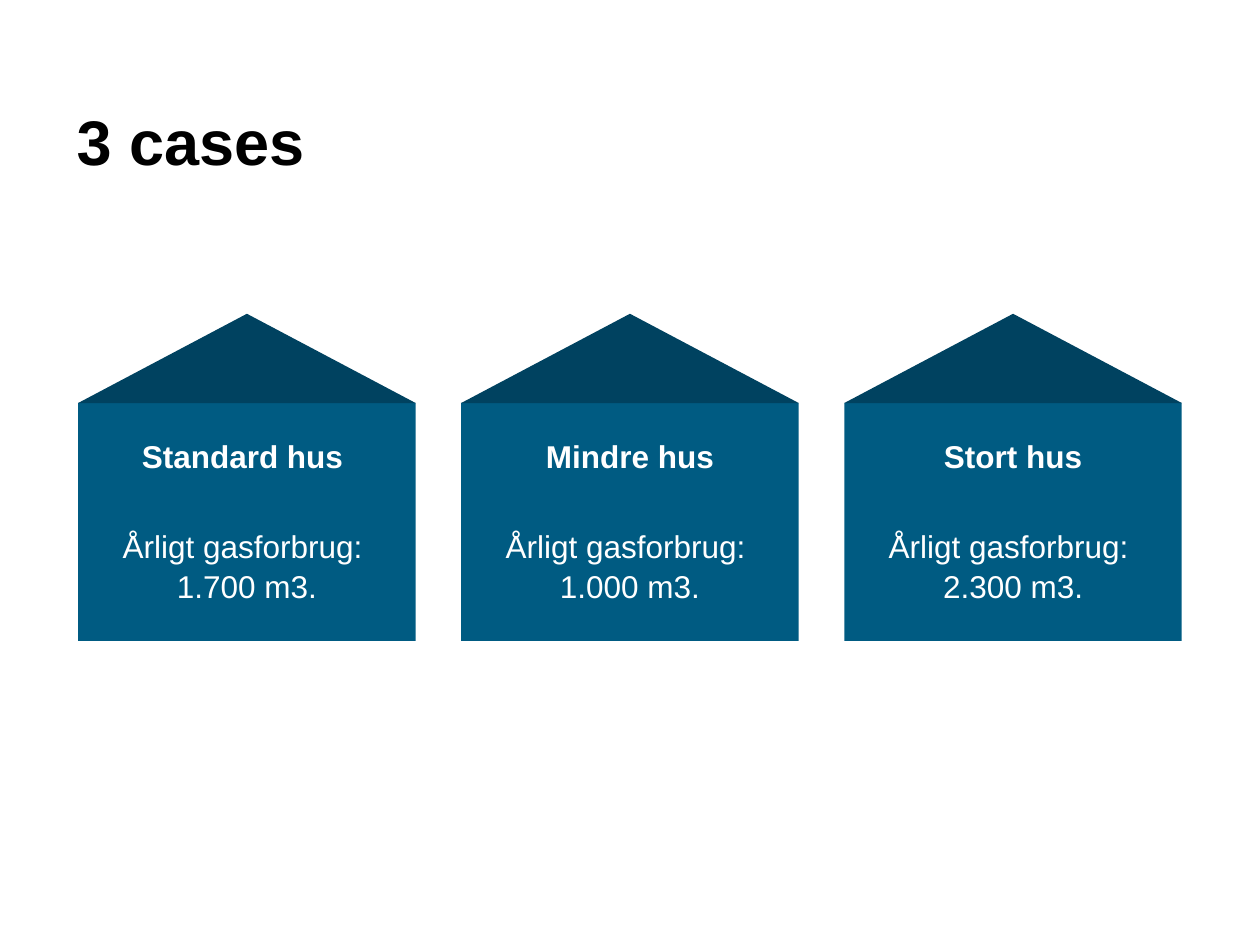
from dataclasses import dataclass

from pptx import Presentation
from pptx.dml.color import RGBColor
from pptx.enum.shapes import MSO_SHAPE
from pptx.enum.text import MSO_ANCHOR, PP_ALIGN
from pptx.shapes.autoshape import Shape
from pptx.slide import Slide
from pptx.util import Pt

RECTANGLE = MSO_SHAPE.RECTANGLE
TRIANGLE = MSO_SHAPE.ISOSCELES_TRIANGLE
TOP, MIDDLE = MSO_ANCHOR.TOP, MSO_ANCHOR.MIDDLE
CENTER = PP_ALIGN.CENTER

PAGE_WIDTH, PAGE_HEIGHT = 720, 540
FONT = "Arial"
WALL, ROOF, WHITE, BLACK = "005B82", "004260", "FFFFFF", "000000"

# House grid: equal gaps between equal side margins
MARGIN = 44.7
HOUSE_WIDTH = 192.8
ROOF_TOP, ROOF_HEIGHT = 179.3, 51
WALL_HEIGHT = 136


@dataclass
class House:
    name: str
    consumption: str


HOUSES = [
    House("Standard hus ", "1.700 m3."),
    House("Mindre hus", "1.000 m3."),
    House("Stort hus", "2.300 m3."),
]


def color(value: str) -> RGBColor:
    return RGBColor.from_string(value)


def format_text(paragraph, size: float, value: str, bold: bool) -> None:
    for span in paragraph.runs:
        span.font.name = FONT
        span.font.size = Pt(size)
        span.font.bold = bold
        span.font.color.rgb = color(value)


def paint(shape: Shape, value: str) -> None:
    shape.shadow.inherit = False
    shape.fill.solid()
    shape.fill.fore_color.rgb = color(value)
    shape.line.fill.background()


def add_title(page: Slide, text: str) -> None:
    box = page.shapes.add_textbox(Pt(36.7), Pt(54.7), Pt(647.3), Pt(56.9))
    frame = box.text_frame
    frame.word_wrap = True
    frame.vertical_anchor = MIDDLE
    frame.text = text
    frame.paragraphs[0].line_spacing = 0.9
    format_text(frame.paragraphs[0], 36, BLACK, True)


def add_house(page: Slide, house: House, left: float) -> None:
    group = page.shapes.add_group_shape()

    # Wall with the name and the yearly consumption
    wall = group.shapes.add_shape(RECTANGLE, Pt(left), Pt(ROOF_TOP + ROOF_HEIGHT),
                                  Pt(HOUSE_WIDTH), Pt(WALL_HEIGHT))
    paint(wall, WALL)
    frame = wall.text_frame
    frame.word_wrap = True
    frame.vertical_anchor = TOP
    frame.margin_top = Pt(18.6)
    frame.text = f"{house.name}\nÅrligt gasforbrug: \v{house.consumption}"
    for paragraph, bold in zip(frame.paragraphs, (True, False)):
        paragraph.alignment = CENTER
        paragraph.line_spacing = 1.05
        format_text(paragraph, 18, WHITE, bold)
    frame.paragraphs[1].space_before = Pt(28.6)

    # Roof
    roof = group.shapes.add_shape(TRIANGLE, Pt(left), Pt(ROOF_TOP),
                                  Pt(HOUSE_WIDTH), Pt(ROOF_HEIGHT))
    paint(roof, ROOF)


def main() -> None:
    deck = Presentation()
    deck.slide_width, deck.slide_height = Pt(PAGE_WIDTH), Pt(PAGE_HEIGHT)
    page = deck.slides.add_slide(deck.slide_layouts[6])

    add_title(page, "3 cases")
    step = (PAGE_WIDTH - 2 * MARGIN - HOUSE_WIDTH) / (len(HOUSES) - 1)
    for index, house in enumerate(HOUSES):
        add_house(page, house, MARGIN + index * step)

    deck.save("out.pptx")


if __name__ == "__main__":
    main()
